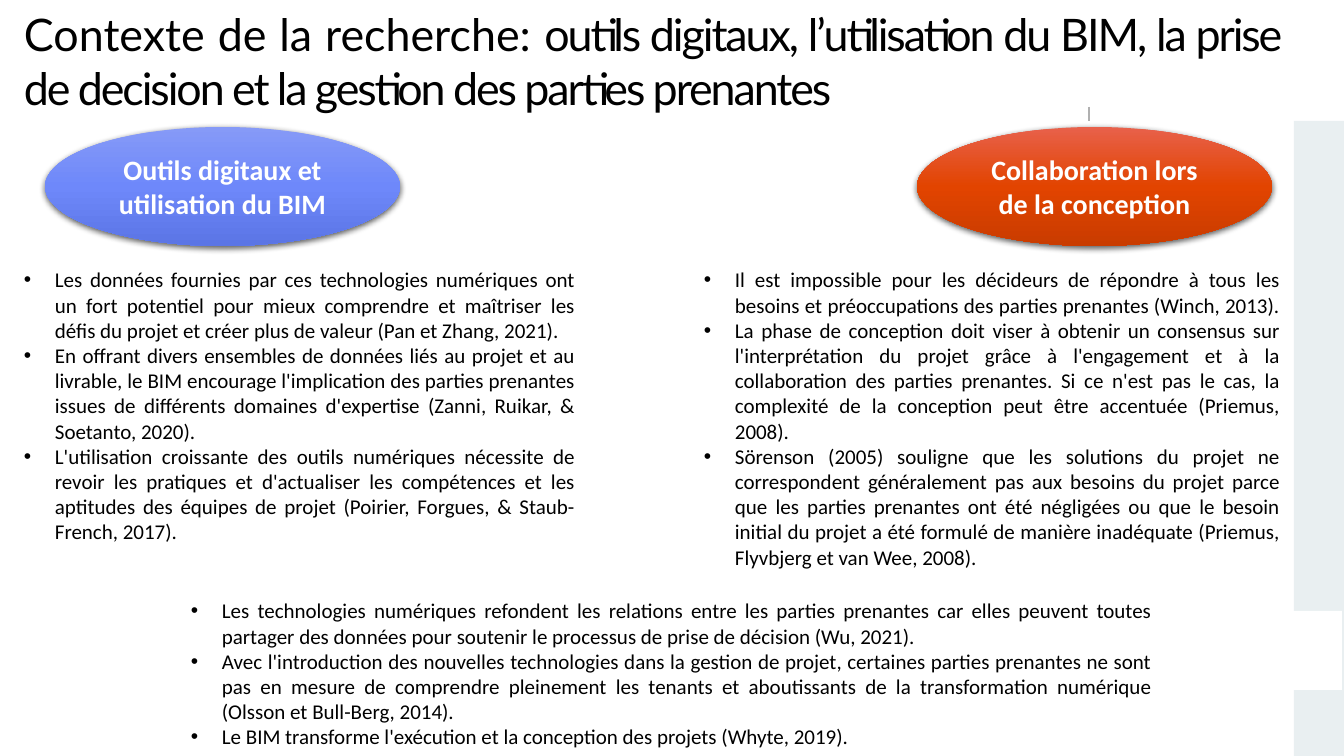
from copy import deepcopy
from dataclasses import dataclass

from lxml.etree import SubElement
from pptx import Presentation
from pptx.dml.color import RGBColor
from pptx.enum.shapes import MSO_CONNECTOR as Connector, MSO_SHAPE as Preset
from pptx.enum.text import MSO_ANCHOR as Anchor, PP_ALIGN as Align
from pptx.oxml.ns import qn
from pptx.shapes.autoshape import Shape
from pptx.slide import Slide
from pptx.util import Emu, Pt

EMU_PER_PX = 914400 / 100.8
BLACK = RGBColor(0x00, 0x00, 0x00)
WHITE = RGBColor(0xFF, 0xFF, 0xFF)
PALE = RGBColor(0xE9, 0xEF, 0xF1)
GREY = RGBColor(0xB0, 0xB0, 0xB0)
BLUES = (RGBColor(0x86, 0x9A, 0xF7), RGBColor(0x6E, 0x88, 0xFA), RGBColor(0x5B, 0x75, 0xE5))
REDS = (RGBColor(0xE8, 0x61, 0x4B), RGBColor(0xE2, 0x44, 0x00), RGBColor(0xC9, 0x3C, 0x00))


@dataclass(frozen=True)
class Box:
    left: int
    top: int
    width: int
    height: int

    def emu(self) -> tuple[Emu, ...]:
        return tuple(px(n) for n in (self.left, self.top, self.width, self.height))


@dataclass(frozen=True)
class Theme:
    box: Box
    label: str
    colours: tuple[RGBColor, ...]


@dataclass(frozen=True)
class BulletList:
    box: Box
    items: tuple[str, ...]


TITLE_BOX = Box(14, 2, 1276, 159)
TITLE_START = "Contexte de la recherche: "
TITLE_END = (
    "outils digitaux, l’utilisation du BIM, la prise de decision "
    "et la gestion des parties prenantes"
)
SIDE_BAR = Box(1294, 121, 50, 635)
SIDE_GAP = Box(1173, 611, 169, 79)

THEMES = (
    Theme(Box(45, 127, 355, 119), "Outils digitaux et utilisation du BIM", BLUES),
    Theme(Box(917, 127, 355, 119), "Collaboration lors de la conception", REDS),
)

BULLET_LISTS = (
    BulletList(Box(14, 262, 571, 316), (
        "Les données fournies par ces technologies numériques ont un fort potentiel pour mieux "
        "comprendre et maîtriser les défis du projet et créer plus de valeur (Pan et Zhang, 2021). ",
        "En offrant divers ensembles de données liés au projet et au livrable, le BIM encourage "
        "l'implication des parties prenantes issues de différents domaines d'expertise "
        "(Zanni, Ruikar, & Soetanto, 2020). ",
        "L'utilisation croissante des outils numériques nécessite de revoir les pratiques et "
        "d'actualiser les compétences et les aptitudes des équipes de projet "
        "(Poirier, Forgues, & Staub- French, 2017). ",
    )),
    BulletList(Box(694, 262, 596, 341), (
        "Il est impossible pour les décideurs de répondre à tous les besoins et préoccupations "
        "des parties prenantes (Winch, 2013). ",
        "La phase de conception doit viser à obtenir un consensus sur l'interprétation du projet "
        "grâce à l'engagement et à la collaboration des parties prenantes. Si ce n'est pas le cas, "
        "la complexité de la conception peut être accentuée (Priemus, 2008). ",
        "Sörenson (2005) souligne que les solutions du projet ne correspondent généralement pas "
        "aux besoins du projet parce que les parties prenantes ont été négligées ou que le besoin "
        "initial du projet a été formulé de manière inadéquate "
        "(Priemus, Flyvbjerg et van Wee, 2008). ",
    )),
    BulletList(Box(181, 593, 981, 214), (
        "Les technologies numériques refondent les relations entre les parties prenantes car elles "
        "peuvent toutes partager des données pour soutenir le processus de prise de décision "
        "(Wu, 2021). ",
        "Avec l'introduction des nouvelles technologies dans la gestion de projet, certaines "
        "parties prenantes ne sont pas en mesure de comprendre pleinement les tenants et "
        "aboutissants de la transformation numérique (Olsson et Bull-Berg, 2014).",
        "Le BIM transforme l'exécution et la conception des projets (Whyte, 2019).",
    )),
)


def px(count: int) -> Emu:
    return Emu(round(count * EMU_PER_PX))


def add_plain_shape(slide: Slide, preset: Preset, box: Box, colour: RGBColor) -> Shape:
    shape = slide.shapes.add_shape(preset, *box.emu())
    shape.shadow.inherit = False
    shape.fill.solid()
    shape.fill.fore_color.rgb = colour
    shape.line.fill.background()
    return shape


def add_tick(slide: Slide, x: int, top: int, bottom: int) -> None:
    tick = slide.shapes.add_connector(Connector.STRAIGHT, px(x), px(top), px(x), px(bottom))
    tick.line.color.rgb = GREY
    tick.line.width = Pt(0.75)
    SubElement(tick._element.spPr, qn("a:effectLst"))


def set_gradient(shape: Shape, colours: tuple[RGBColor, ...]) -> None:
    shape.fill.gradient()
    shape.fill.gradient_angle = 270
    stop_list = shape._element.spPr.find(".//" + qn("a:gsLst"))
    while len(stop_list) < len(colours):
        stop_list.append(deepcopy(stop_list[0]))
    for index, (stop, colour) in enumerate(zip(shape.fill.gradient_stops, colours)):
        stop.position = index / (len(colours) - 1)
        stop.color.rgb = colour


def add_shadow(shape: Shape) -> None:
    effects = shape._element.spPr.find(qn("a:effectLst"))
    shadow = SubElement(effects, qn("a:outerShdw"), blurRad=str(Pt(4.5)), dist=str(Pt(1.5)),
                        dir="5400000", rotWithShape="0")
    colour = SubElement(shadow, qn("a:srgbClr"), val=str(BLACK))
    SubElement(colour, qn("a:alpha"), val="63000")


def add_theme(slide: Slide, theme: Theme) -> None:
    ellipse = add_plain_shape(slide, Preset.OVAL, theme.box, theme.colours[0])
    set_gradient(ellipse, theme.colours)
    add_shadow(ellipse)
    frame = ellipse.text_frame
    frame.word_wrap = True
    frame.vertical_anchor = Anchor.MIDDLE
    paragraph = frame.paragraphs[0]
    paragraph.text = theme.label
    paragraph.alignment = Align.CENTER
    font = paragraph.font
    font.name, font.size, font.bold = "Calibri", Pt(20), True
    font.color.rgb = WHITE


def add_title(slide: Slide) -> None:
    frame = slide.shapes.add_textbox(*TITLE_BOX.emu()).text_frame
    frame.word_wrap = True
    paragraph = frame.paragraphs[0]
    paragraph.alignment = Align.JUSTIFY
    paragraph.font.name, paragraph.font.size = "Lato", Pt(32)
    paragraph.font.color.rgb = BLACK
    paragraph.add_run().text = TITLE_START
    ending = paragraph.add_run()
    ending.text = TITLE_END
    ending.font._element.set("spc", "-150")


def add_bullet_list(slide: Slide, bullet_list: BulletList) -> None:
    frame = slide.shapes.add_textbox(*bullet_list.box.emu()).text_frame
    frame.word_wrap = True
    for index, item in enumerate(bullet_list.items):
        paragraph = frame.add_paragraph() if index else frame.paragraphs[0]
        paragraph.text = item
        paragraph.alignment = Align.JUSTIFY
        paragraph.font.name, paragraph.font.size = "Calibri", Pt(15)
        paragraph.font.color.rgb = BLACK
        properties = paragraph._p.get_or_add_pPr()
        properties.set("marL", str(px(31)))
        properties.set("indent", str(-px(31)))
        bullet_font = properties.makeelement(qn("a:buFont"), {"typeface": "Arial"})
        bullet = properties.makeelement(qn("a:buChar"), {"char": "•"})
        properties.insert(0, bullet_font)
        properties.insert(1, bullet)


def main() -> None:
    presentation = Presentation()
    presentation.slide_width, presentation.slide_height = px(1344), px(756)
    slide = presentation.slides.add_slide(presentation.slide_layouts[6])
    add_tick(slide, 1089, 107, 121)
    add_plain_shape(slide, Preset.RECTANGLE, SIDE_BAR, PALE)
    add_title(slide)
    for theme in THEMES:
        add_theme(slide, theme)
    for bullet_list in BULLET_LISTS:
        add_bullet_list(slide, bullet_list)
    add_plain_shape(slide, Preset.RECTANGLE, SIDE_GAP, WHITE)
    presentation.save("out.pptx")


if __name__ == "__main__":
    main()
